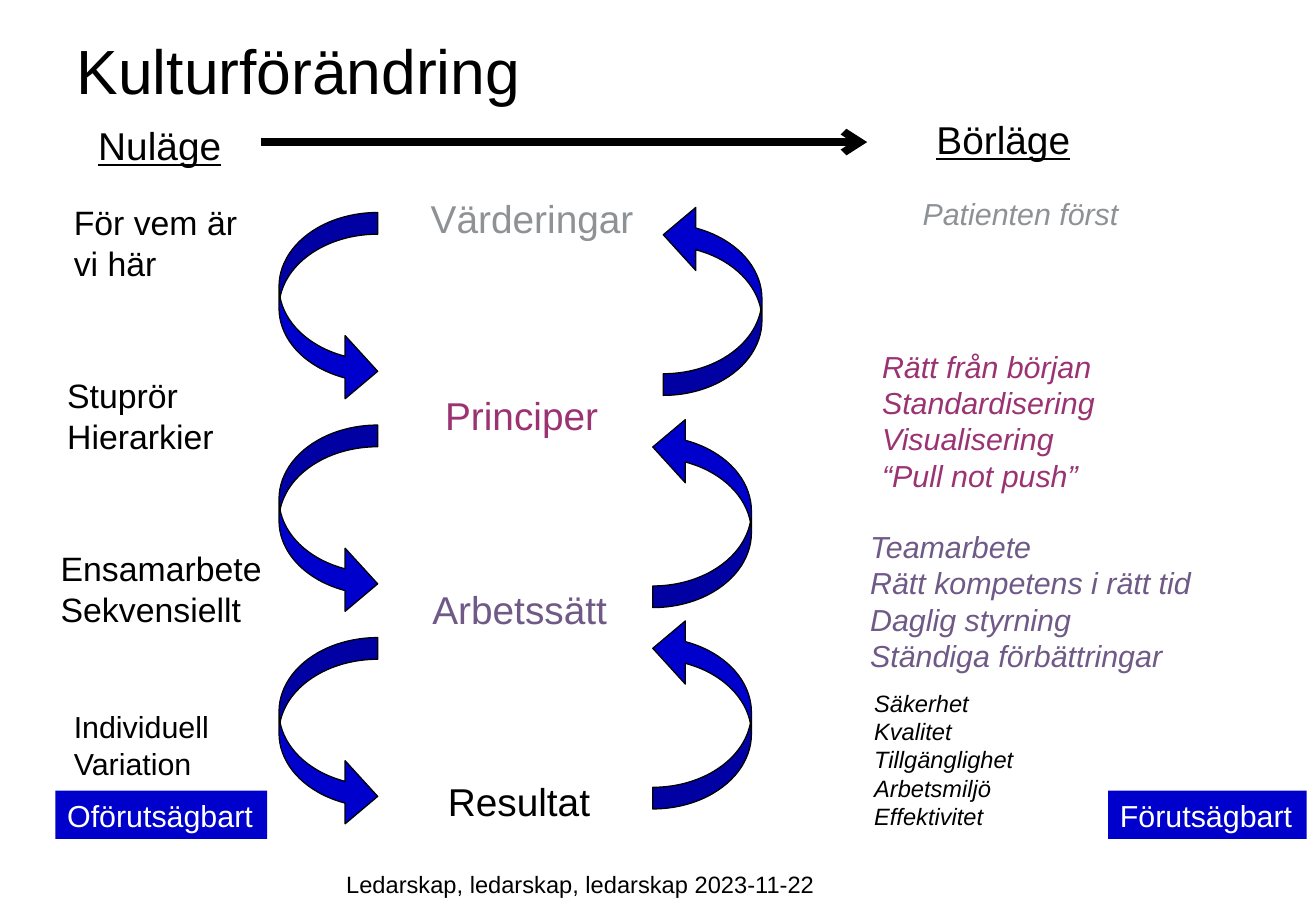
from dataclasses import dataclass

from lxml.etree import SubElement
from pptx import Presentation
from pptx.dml.color import RGBColor
from pptx.enum.shapes import MSO_CONNECTOR as Connector, MSO_SHAPE as Preset
from pptx.enum.text import MSO_ANCHOR as Anchor, MSO_AUTO_SIZE as AutoSize, PP_ALIGN as Align
from pptx.oxml.ns import qn
from pptx.util import Inches, Pt


@dataclass(frozen=True)
class Theme:
    font: str = "Arial"
    ink: str = "000000"
    paper: str = "FFFFFF"
    accent: str = "0000CC"
    values: str = "8E9295"
    principles: str = "9B3373"
    methods: str = "6F5987"
    title: int = 37
    heading: int = 23
    current: int = 20
    body: int = 18
    small: int = 14


class Board:
    """Draws on one slide; every length is a percentage of the slide."""

    def __init__(self, deck, layout, theme):
        self.deck, self.theme = deck, theme
        self.slide = deck.slides.add_slide(deck.slide_layouts[layout])

    def place(self, x, y, w, h):
        width, height = self.deck.slide_width, self.deck.slide_height
        return [round(share * full / 100) for share, full in
                ((x, width), (y, height), (w, width), (h, height))]

    def add_lines(self, frame, lines, size, color=None, align=Align.LEFT,
                  anchor=Anchor.TOP, wrap=True, italic=False, underline=False):
        frame.word_wrap, frame.vertical_anchor = wrap, anchor
        frame.auto_size = AutoSize.NONE
        for number, line in enumerate(lines):
            paragraph = frame.paragraphs[0] if number == 0 else frame.add_paragraph()
            paragraph.alignment = align
            paragraph.space_before = Pt(0)
            run = paragraph.add_run()
            run.text = line
            font = run.font
            font.name, font.size = self.theme.font, Pt(size)
            font.bold, font.italic, font.underline = False, italic, underline
            font.color.rgb = RGBColor.from_string(color or self.theme.ink)

    def label(self, box, lines, size, wrap=False, **style):
        holder = self.slide.shapes.add_textbox(*self.place(*box))
        self.add_lines(holder.text_frame, lines, size, wrap=wrap, **style)

    def placeholder(self, index, box, lines, size, **style):
        holder = self.slide.placeholders[index]
        holder.left, holder.top, holder.width, holder.height = self.place(*box)
        self.add_lines(holder.text_frame, lines, size, **style)
        return holder

    def plain_list(self, index, box, lines, size, **style):
        holder = self.placeholder(index, box, lines, size, italic=True, **style)
        for paragraph in holder.text_frame.paragraphs:
            properties = paragraph._p.get_or_add_pPr()
            properties.set("marL", "0")
            properties.set("indent", "0")
            SubElement(properties, qn("a:buNone"))

    def filled(self, preset, box):
        shape = self.slide.shapes.add_shape(preset, *self.place(*box))
        shape.shadow.inherit = False
        shape.fill.solid()
        shape.fill.fore_color.rgb = RGBColor.from_string(self.theme.accent)
        return shape

    def tag(self, box, text):
        shape = self.filled(Preset.RECTANGLE, box)
        shape.line.fill.background()
        self.add_lines(shape.text_frame, [text], self.theme.body,
                       color=self.theme.paper, wrap=False)

    def curve(self, box, rotation=0):
        shape = self.filled(Preset.CURVED_RIGHT_ARROW, box)
        shape.line.color.rgb = RGBColor.from_string(self.theme.ink)
        shape.line.width = Pt(0.75)
        shape.rotation = rotation
        for number, value in enumerate((0.22, 0.64, 0.33)):
            shape.adjustments[number] = value

    def arrow(self, x, y, length):
        left, top, width, _ = self.place(x, y, length, 0)
        line = self.slide.shapes.add_connector(
            Connector.STRAIGHT, left, top, left + width, top)
        line.line.color.rgb = RGBColor.from_string(self.theme.ink)
        line.line.width = Pt(4.5)
        SubElement(line.line._get_or_add_ln(), qn("a:tailEnd"), type="arrow")
        SubElement(line._element.spPr, qn("a:effectLst"))


def main():
    deck = Presentation()
    deck.slide_width, deck.slide_height = Inches(10.83), Inches(7.5)
    theme = Theme()
    board = Board(deck, 4, theme)

    # Title and the way from the current to the desired state
    board.placeholder(0, (4.9, 3.7, 87.5, 8.7), ["Kulturförändring"],
                      theme.title, anchor=Anchor.BOTTOM)
    for state, box in (("Nuläge", (6.5, 12.7, 11.3, 6.5)),
                       ("Börläge", (70.2, 12.1, 12.1, 6.5))):
        board.label(box, [state], theme.heading, align=Align.CENTER, underline=True)
    board.arrow(19.8, 15.6, 46.1)

    # Curved arrows: down on the left, up on the right
    for step in range(3):
        board.curve((21.2, 23.33 * (step + 1), 7.5, 20.9))
    for x, y in ((50.4, 22.3), (49.6, 45.6), (49.6, 67.7)):
        board.curve((x, y, 7.5, 21.1), rotation=180)

    # Levels of the culture
    for level, box, color in (
            ("Värderingar", (29.6, 20.7, 21.7, 6.5), theme.values),
            ("Principer", (31.3, 42.3, 16.7, 6.5), theme.principles),
            ("Arbetssätt", (31.9, 63.6, 15.2, 6.5), theme.methods),
            ("Resultat", (33.1, 84.7, 12.7, 6.5), theme.ink)):
        board.label(box, [level], theme.heading, color=color, align=Align.CENTER)

    # Current state
    for traits, box, size in (
            (["För vem är", "vi här"], (4.7, 21.5, 15.1, 10.3), theme.current),
            (["Stuprör", "Hierarkier"], (4.2, 40.5, 13.1, 10.3), theme.current),
            (["Ensamarbete", "Sekvensiellt"], (3.7, 59.5, 17.3, 10.3), theme.current),
            (["Individuell", "Variation"], (4.7, 77.1, 12.2, 9.5), theme.body)):
        board.label(box, traits, size)

    # Desired state
    board.plain_list(1, (60.8, 20.7, 33.5, 5.3), ["Patienten först"],
                     theme.body, color=theme.values, align=Align.CENTER)
    board.plain_list(2, (66.1, 37.5, 29.7, 17.5),
                     ["Rätt från början", "Standardisering", "Visualisering",
                      "“Pull not push”"],
                     theme.body, color=theme.principles)
    board.plain_list(3, (65.2, 57.3, 32, 17.5),
                     ["Teamarbete", "Rätt kompetens i rätt tid", "Daglig styrning",
                      "Ständiga förbättringar"],
                     theme.body, color=theme.methods)
    board.plain_list(4, (65.5, 74.9, 19.4, 17.1),
                     ["Säkerhet", "Kvalitet", "Tillgänglighet", "Arbetsmiljö",
                      "Effektivitet"],
                     theme.small)

    # Outcomes and footer
    board.tag((4.2, 86.8, 16.1, 5.3), "Oförutsägbart")
    board.tag((84.2, 86.8, 15.1, 5.3), "Förutsägbart")
    board.label((25.4, 94.8, 41.4, 5.2),
                ["Ledarskap, ledarskap, ledarskap 2023-11-22"],
                theme.small, wrap=True)

    deck.save("out.pptx")


if __name__ == "__main__":
    main()
